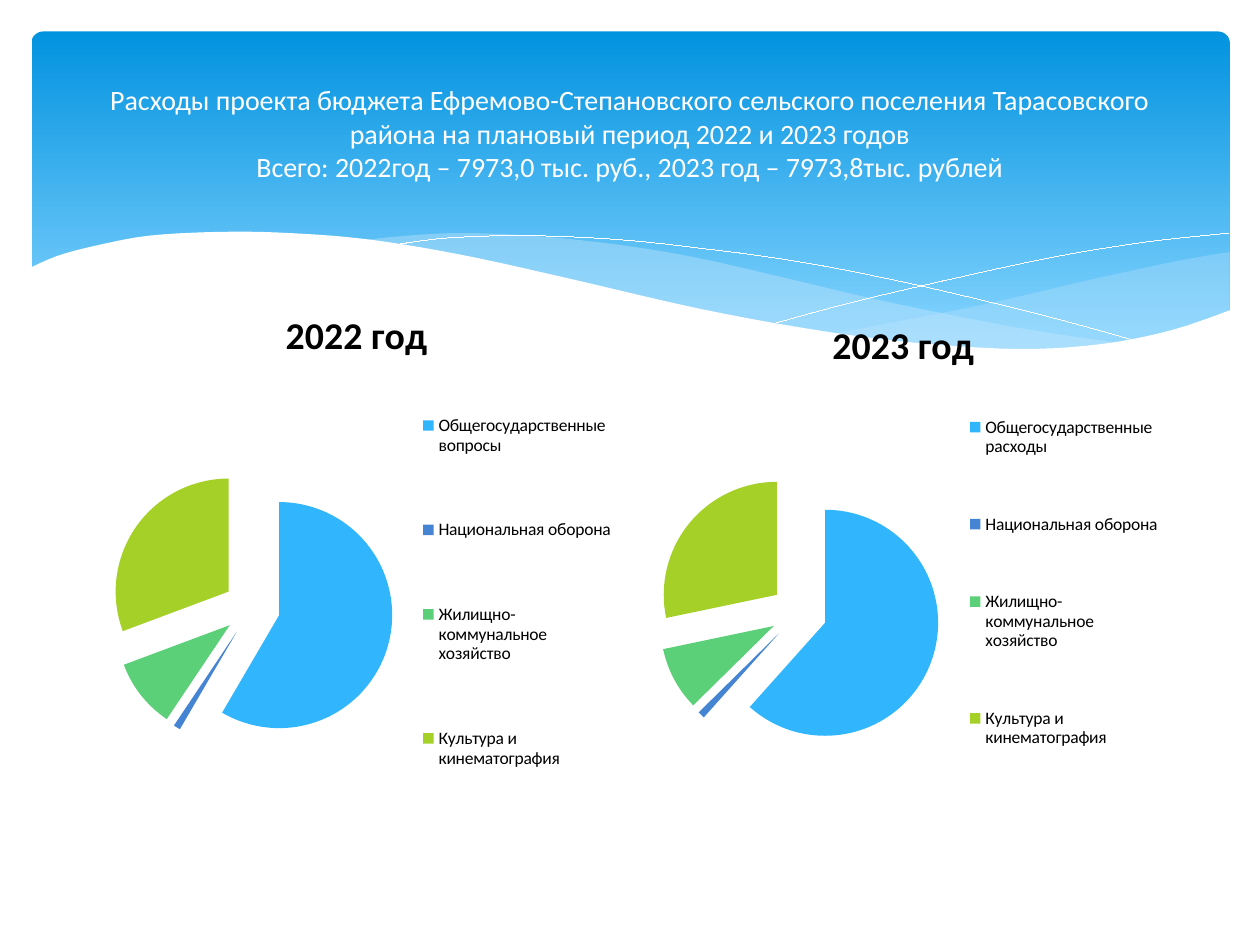
from lxml import etree
from pptx import Presentation
from pptx import util as u
from pptx.chart.data import CategoryChartData
from pptx.dml.color import RGBColor
from pptx.enum import chart as ch, shapes, text
from pptx.oxml.ns import qn

PX = 9144  # EMU per px, 100 px to the inch
FONT = "Calibri"
WHITE, BLACK, MIST = "FFFFFF", "000000", "C6E7FC"
SLICES = ["31B6FD", "4584D3", "5BD078", "A5D028"]


def rgb(color):
    return RGBColor.from_string(color)


def smooth(knots, steps=5):
    """Points of a Catmull-Rom curve through the knots."""
    ends = [knots[0], *knots, knots[-1]]
    pts = []
    for a, b, c, d in zip(ends, ends[1:], ends[2:], ends[3:]):
        for i in range(steps):
            t = i / steps
            pts.append(tuple(
                0.5 * (2 * q + (r - p) * t + (2 * p - 5 * q + 4 * r - v) * t ** 2
                       + (3 * q - p - 3 * r + v) * t ** 3)
                for p, q, r, v in zip(a, b, c, d)))
    return pts + [knots[-1]]


def place(part, **fractions):
    """Fix a chart title or legend at x, y (and w, h) as fractions of the chart."""
    element = part._element
    for old in element.findall(qn("c:layout")):
        element.remove(old)
    layout = etree.Element(qn("c:layout"))
    manual = etree.SubElement(layout, qn("c:manualLayout"))
    for key in "xy":
        etree.SubElement(manual, qn(f"c:{key}Mode"), val="edge")
    for key, value in fractions.items():
        etree.SubElement(manual, qn(f"c:{key}"), val=str(value))
    element.find(qn("c:overlay")).addprevious(layout)


class Deck:
    def __init__(self, width, height):
        self.prs = Presentation()
        self.prs.slide_width, self.prs.slide_height = width * PX, height * PX
        self.s = self.prs.slides.add_slide(self.prs.slide_layouts[5])

    def style(self, font, size, color, bold=False):
        font.name, font.size, font.bold = FONT, u.Pt(size), bold
        font.color.rgb = rgb(color)

    def banner(self, x, y, w, h, radius, stops):
        sp = self.s.shapes.add_shape(shapes.MSO_SHAPE.ROUNDED_RECTANGLE,
                                     *(v * PX for v in (x, y, w, h)))
        sp.adjustments[0] = radius
        sp.shadow.inherit = False
        sp.line.fill.background()
        sp.fill.gradient()
        sp.fill.gradient_angle = 270
        for stop, (position, color) in zip(sp.fill.gradient_stops, stops):
            stop.position, stop.color.rgb = position, rgb(color)

    def outline(self, pts, closed):
        pts = [(round(x * PX), round(y * PX)) for x, y in pts]
        fb = self.s.shapes.build_freeform(*pts[0])
        fb.add_line_segments(pts[1:], close=closed)
        sp = fb.convert_to_shape()
        sp.shadow.inherit = False
        return sp

    def wave(self, pts, color, opacity=100):
        sp = self.outline(pts, True)
        sp.line.fill.background()
        sp.fill.solid()
        sp.fill.fore_color.rgb = rgb(color)
        if opacity < 100:
            clr = sp.element.spPr.find(qn("a:solidFill"))[0]
            etree.SubElement(clr, qn("a:alpha"), val=str(opacity * 1000))

    def curve(self, knots, color):
        sp = self.outline(smooth(knots), False)
        sp.fill.background()
        sp.line.color.rgb = rgb(color)
        sp.line.width = 1  # hairline

    def title(self, x, y, w, h, lines, size):
        sp = self.s.shapes.title
        self.s.shapes.element.append(sp.element)  # in front of the waves
        sp.left, sp.top, sp.width, sp.height = (v * PX for v in (x, y, w, h))
        tf = sp.text_frame
        tf.word_wrap = True
        tf.auto_size = text.MSO_AUTO_SIZE.NONE
        tf.vertical_anchor = text.MSO_ANCHOR.MIDDLE
        p = tf.paragraphs[0]
        p.alignment = text.PP_ALIGN.CENTER
        for i, line in enumerate(lines):
            if i:
                p.add_line_break()
            r = p.add_run()
            r.text = line
            self.style(r.font, size, WHITE)

    def pie(self, x, y, w, h, heading, series, cats, vals, legend_height):
        data = CategoryChartData(number_format="0")
        data.categories = cats
        data.add_series(series, vals)
        chart = self.s.shapes.add_chart(ch.XL_CHART_TYPE.PIE,
                                        *(v * PX for v in (x, y, w, h)), data).chart
        self.style(chart.font, 18, BLACK)
        chart.has_title = True
        chart.chart_title.include_in_layout = False
        r = chart.chart_title.text_frame.paragraphs[0].add_run()
        r.text = heading
        self.style(r.font, 21.6, BLACK, bold=True)
        chart.has_legend = True
        chart.legend.position = ch.XL_LEGEND_POSITION.RIGHT
        chart.legend.include_in_layout = False
        self.style(chart.legend.font, 10, BLACK)
        place(chart.legend, x=0.63, y=0.12, w=0.37, h=legend_height)
        plot = chart.plots[0]
        plot.vary_by_categories = True
        ser = plot.series[0]
        for i, color in enumerate(SLICES):
            fill = ser.points[i].format.fill
            fill.solid()
            fill.fore_color.rgb = rgb(color)
        explosion = etree.Element(qn("c:explosion"), val="25")
        ser._element.find(qn("c:dPt")).addprevious(explosion)


def main():
    d = Deck(1000, 750)
    d.banner(25, 25, 951, 270, 0.034, [(0, "0293E0"), (0.9, "83D3FE")])

    d.wave(smooth([(976, 200), (935, 207), (861, 223), (779, 242), (661, 265)])
           + smooth([(661, 265), (719, 271), (769, 277), (814, 278), (863, 275),
                     (913, 267), (949, 257), (976, 247)]), MIST, 29)
    d.wave(smooth([(893, 273), (807, 260), (706, 240), (629, 222), (555, 205),
                   (489, 194), (420, 187), (361, 185), (313, 188), (286, 191)])
           + smooth([(286, 191), (362, 203), (449, 222), (566, 248), (650, 264),
                     (722, 274), (785, 278), (848, 277), (893, 273)]), MIST, 40)
    d.curve([(309, 195), (353, 189), (416, 187), (489, 190), (556, 197),
             (636, 208), (727, 226), (831, 251), (907, 272)], WHITE)
    d.curve([(613, 257), (672, 241), (748, 223), (836, 204), (910, 192),
             (975, 185)], WHITE)
    d.wave(smooth([(977, 246), (930, 262), (875, 273), (809, 277), (726, 272),
                   (648, 262), (555, 245), (447, 220), (365, 202), (292, 190),
                   (230, 185), (177, 184), (119, 187), (76, 195), (46, 203),
                   (23, 213)]) + [(23, 329), (977, 329)], WHITE)

    d.title(50, 37, 900, 137, [
        "Расходы проекта бюджета Ефремово-Степановского сельского поселения "
        "Тарасовского района на плановый период 2022 и 2023 годов",
        "Всего: 2022год – 7973,0 тыс. руб., 2023 год – 7973,8тыс. рублей"], 16)

    shared = ["Национальная оборона", "Жилищно-коммунальное хозяйство",
              "Культура и кинематография"]
    d.pie(74, 225, 418, 445, "2022 год", "Series 1",
          ["Общегосударственные вопросы", *shared], [59, 1, 10, 31], 0.86)
    d.pie(508, 233, 418, 437, "2023 год", "2023 год",
          ["Общегосударственные расходы", *shared], [61, 1, 9, 28], 0.81)
    d.prs.save("out.pptx")


if __name__ == "__main__":
    main()
